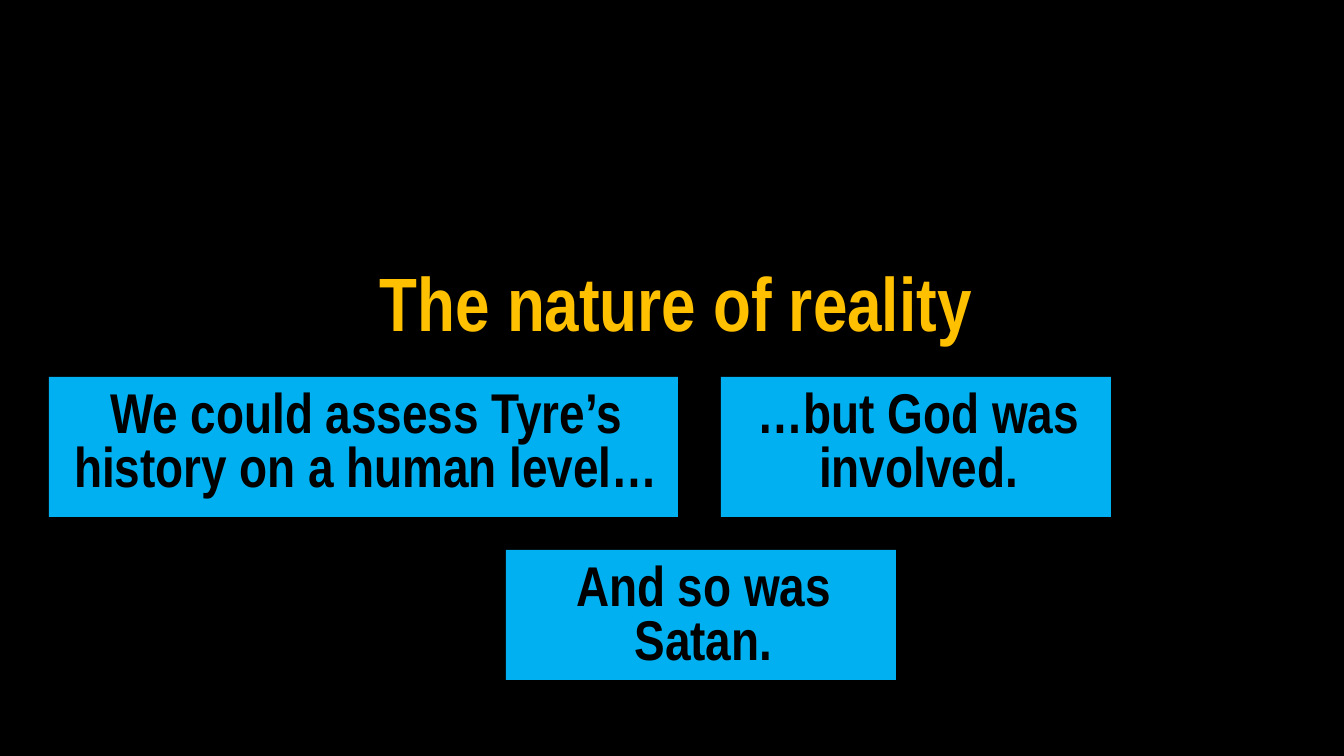
from pptx import Presentation
from pptx import util as u
from pptx.dml.color import RGBColor
from pptx.enum import shapes, text

EMU_PER_PX = 914400 / 100.8
BLACK, GOLD, BLUE = "000000", "FFC000", "00B0F0"
TITLE_AREA = (2, 281, 1344, 163)
STATEMENTS = [
    ("We could assess Tyre’s history on a human level…", (49, 377, 629, 140)),
    ("…but God was involved.", (721, 377, 390, 140)),
    ("And so was Satan.", (506, 550, 390, 130)),
]


def px(length):
    return u.Emu(round(length * EMU_PER_PX))


def paint(fill, color):
    fill.solid()
    fill.fore_color.rgb = RGBColor.from_string(color)


def set_all(target, values):
    for name, value in values.items():
        setattr(target, name, value)


def write(shape, wording, size, spacing, color, margins):
    """Fill a shape with one centred bold paragraph; margins are left, top, right, bottom."""
    frame = shape.text_frame
    left, top, right, bottom = map(px, margins)
    set_all(frame, {
        "word_wrap": True,
        "auto_size": text.MSO_AUTO_SIZE.NONE,
        "vertical_anchor": text.MSO_ANCHOR.TOP,
        "margin_left": left,
        "margin_top": top,
        "margin_right": right,
        "margin_bottom": bottom,
    })
    para = frame.paragraphs[0]
    set_all(para, {
        "alignment": text.PP_ALIGN.CENTER,
        "line_spacing": u.Pt(spacing),
        "space_before": u.Pt(0),
        "space_after": u.Pt(12),
    })
    span = para.add_run()
    span.text = wording
    set_all(span.font, {"name": "Arial Narrow", "size": u.Pt(size), "bold": True})
    paint(span.font.fill, color)


def place_title(page, wording, area):
    title = page.shapes.title
    set_all(title, dict(zip(("left", "top", "width", "height"), map(px, area))))
    write(title, wording, 54, 43, GOLD, (14, 5, 10, 5))


def add_statement(page, wording, area):
    box = page.shapes.add_shape(shapes.MSO_SHAPE.RECTANGLE, *map(px, area))
    box.shadow.inherit = False
    paint(box.fill, BLUE)
    box.line.fill.background()
    write(box, wording, 40, 38, BLACK, (10, 15, 5, 5))


def main():
    deck = Presentation()
    deck.slide_width, deck.slide_height = px(1344), px(756)
    page = deck.slides.add_slide(deck.slide_layouts.get_by_name("Title Only"))
    paint(page.background.fill, BLACK)
    place_title(page, "The nature of reality", TITLE_AREA)
    for wording, area in STATEMENTS:
        add_statement(page, wording, area)
    deck.save("out.pptx")


if __name__ == "__main__":
    main()
